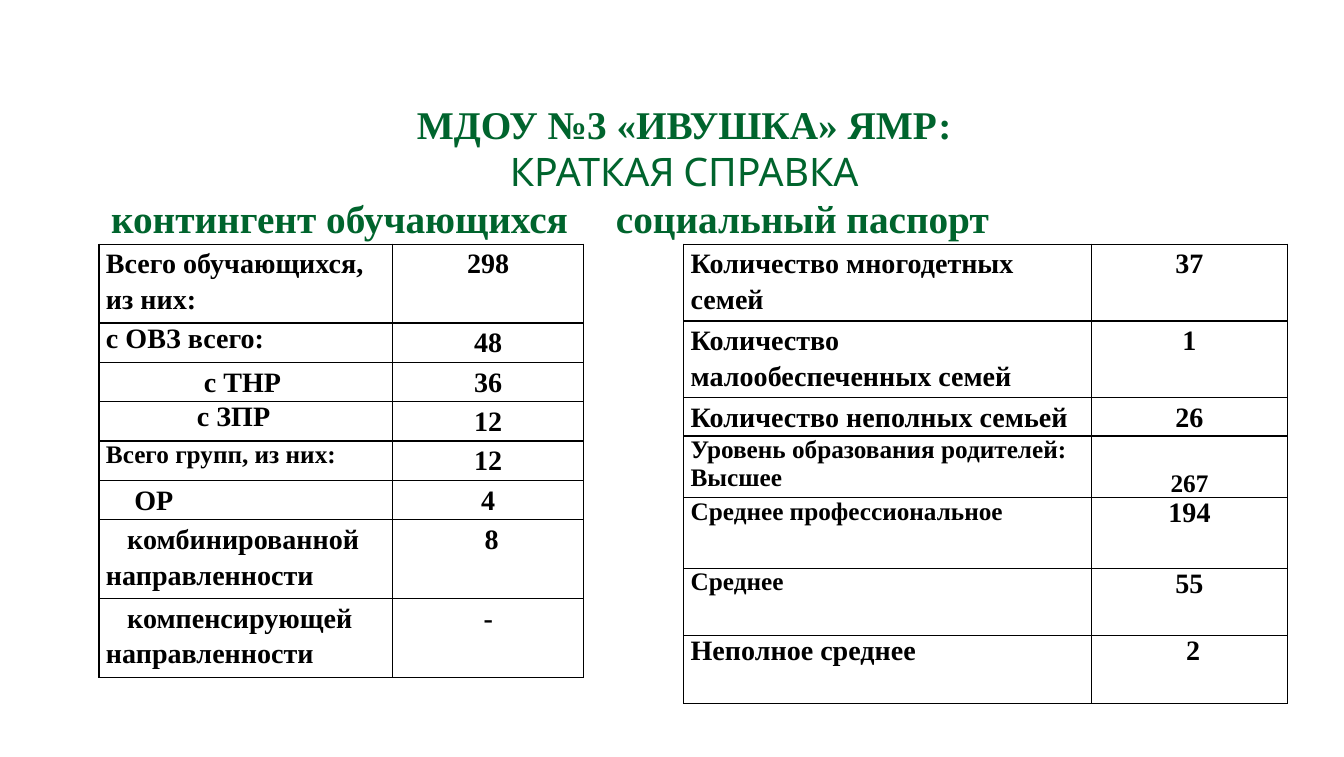
from dataclasses import dataclass

from lxml.etree import SubElement
from pptx import Presentation
from pptx.dml.color import RGBColor
from pptx.enum.text import MSO_ANCHOR as Anchor, MSO_AUTO_SIZE as AutoSize, PP_ALIGN as Align
from pptx.oxml.ns import qn
from pptx.util import Inches, Pt

SERIF = "Times New Roman"
GREEN = "00642D"
BLACK = "000000"


@dataclass
class Entry:
    """Text of one table cell with its formatting."""
    text: str
    size: int = 20
    spacing: float = 1.15
    indent: float = 0
    anchor: Anchor = Anchor.TOP


PUPILS = [
    (Entry("Всего обучающихся, из них:"), Entry("298")),
    (Entry("с ОВЗ всего:", spacing=1), Entry("48")),
    (Entry("с ТНР", indent=0.97), Entry("36")),
    (Entry("с ЗПР", spacing=1, indent=0.9), Entry("12")),
    (Entry("Всего групп, из них:", 18, 1), Entry("12")),
    (Entry("ОР", indent=0.28), Entry("4")),
    (Entry("комбинированной направленности", indent=0.21), Entry("8", indent=0.07)),
    (Entry("компенсирующей направленности", indent=0.21), Entry("-")),
]
FAMILIES = [
    (Entry("Количество многодетных семей"), Entry("37")),
    (Entry("Количество малообеспеченных семей"), Entry("1")),
    (Entry("Количество неполных семьей"), Entry("26")),
    (Entry("Уровень образования родителей:\nВысшее", 18, 1),
     Entry("267", 18, 1, anchor=Anchor.BOTTOM)),
    (Entry("Среднее профессиональное", 18, 1), Entry("194", spacing=1)),
    (Entry("Среднее", 18, 1), Entry("55", spacing=1)),
    (Entry("Неполное среднее", spacing=1), Entry("2", spacing=1, indent=0.07)),
]


def color(value):
    return RGBColor.from_string(value)


def format_runs(para, size, name, value, bold):
    for span in para.runs:
        span.font.size = Pt(size)
        span.font.name = name
        span.font.color.rgb = color(value)
        span.font.bold = bold


def set_margins(box, side):
    box.margin_left = box.margin_right = Inches(side)
    box.margin_top = box.margin_bottom = 0


def add_heading(page):
    title = page.shapes.title
    title.left, title.top = Inches(0.12), Inches(0.99)
    title.width, title.height = Inches(13.31), Inches(1.41)
    frame = title.text_frame
    frame.text = ("МДОУ №3 «ИВУШКА» ЯМР:\nКРАТКАЯ СПРАВКА\n"
                  "контингент обучающихся\tсоциальный паспорт")
    frame.word_wrap = True
    frame.auto_size = AutoSize.NONE
    frame.vertical_anchor = Anchor.TOP
    set_margins(frame, 0)
    for para, name in zip(frame.paragraphs, (SERIF, "Cabin", SERIF)):
        para.alignment = Align.CENTER
        format_runs(para, 28, name, GREEN, name == SERIF)

    # The last line holds the captions of both tables
    captions = frame.paragraphs[-1]
    captions.alignment = Align.LEFT
    props = captions._p.get_or_add_pPr()
    props.set("marL", str(Inches(0.98)))
    props.set("indent", "0")
    tabs = SubElement(props, qn("a:tabLst"))
    SubElement(tabs, qn("a:tab"), pos=str(Inches(8.61)), algn="l")


def add_borders(cell):
    props = cell._tc.get_or_add_tcPr()
    for side in ("a:lnL", "a:lnR", "a:lnT", "a:lnB"):
        line = SubElement(props, qn(side), w=str(Pt(1)))
        fill = SubElement(line, qn("a:solidFill"))
        SubElement(fill, qn("a:srgbClr"), val=BLACK)


def fill_cell(cell, entry, align):
    add_borders(cell)
    cell.fill.background()
    set_margins(cell, 0.07)
    cell.vertical_anchor = entry.anchor
    cell.text_frame.text = entry.text
    for para in cell.text_frame.paragraphs:
        para.alignment = align
        para.line_spacing = entry.spacing
        props = para._p.get_or_add_pPr()
        props.set("marL", "0")
        props.set("indent", str(Inches(entry.indent)))
        format_runs(para, entry.size, SERIF, BLACK, True)


def add_grid(page, left, widths, heights, rows):
    frame = page.shapes.add_table(len(rows), len(widths), Inches(left), Inches(2.42),
                                  Inches(sum(widths)), Inches(sum(heights)))
    table = frame.table
    table.first_row = table.horz_banding = False
    for column, width in zip(table.columns, widths):
        column.width = Inches(width)
    for index, (height, entries) in enumerate(zip(heights, rows)):
        table.rows[index].height = Inches(height)
        for position, align in enumerate((Align.LEFT, Align.CENTER)):
            fill_cell(table.cell(index, position), entries[position], align)


def main():
    deck = Presentation()
    deck.slide_width, deck.slide_height = Inches(13.31), Inches(7.5)
    page = deck.slides.add_slide(deck.slide_layouts[5])
    add_heading(page)
    # Pupils on the left, families on the right
    add_grid(page, 0.98, (2.91, 1.89), [0.78] + [0.39] * 5 + [0.78] * 2, PUPILS)
    add_grid(page, 6.77, (4.04, 1.94), [0.76, 0.76, 0.38, 0.61, 0.7, 0.67, 0.67], FAMILIES)
    deck.save("out.pptx")


if __name__ == "__main__":
    main()
